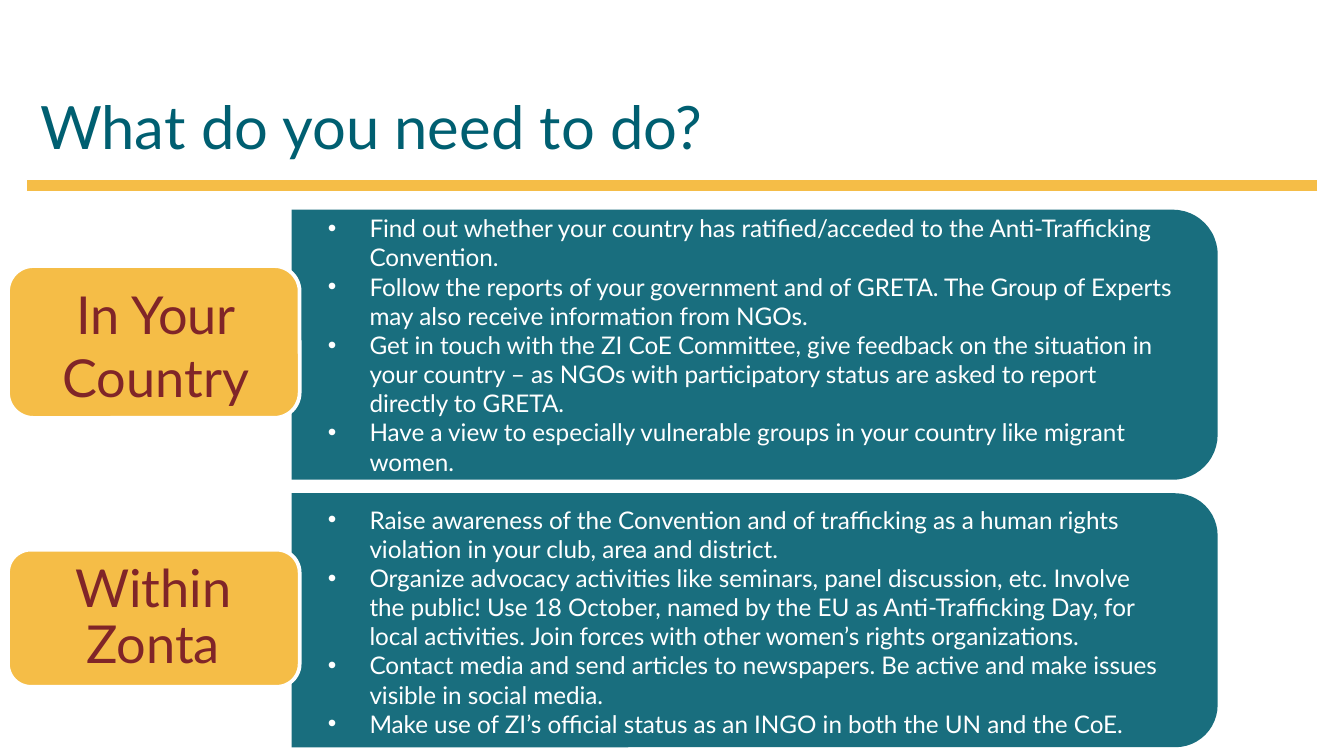
import pptx
import pptx.dml.color
import pptx.enum.shapes
import pptx.enum.text
import pptx.util
from lxml import etree
from pptx.oxml.ns import qn

Inches = pptx.util.Inches
Pt = pptx.util.Pt
RGBColor = pptx.dml.color.RGBColor
SHAPE = pptx.enum.shapes.MSO_SHAPE
ANCHOR = pptx.enum.text.MSO_ANCHOR
ALIGN = pptx.enum.text.PP_ALIGN

TEAL = RGBColor(0x00, 0x5F, 0x71)
GOLD = RGBColor(0xF5, 0xBD, 0x47)
MAROON = RGBColor(0x80, 0x25, 0x28)
WHITE = RGBColor(0xFF, 0xFF, 0xFF)
FONT = "Lato"

PAGE_WIDTH = 10
PAGE_HEIGHT = PAGE_WIDTH * 9 / 16
PANEL_LEFT, PANEL_WIDTH = 2.17, 6.89
LABEL_LEFT, LABEL_WIDTH = 0.06, 2.17

COUNTRY_STEPS = [
    "Find out whether your country has ratified/acceded to the Anti-Trafficking Convention.",
    "Follow the reports of your government and of GRETA. The Group of Experts may also "
    "receive information from NGOs.",
    "Get in touch with the ZI CoE Committee, give feedback on the situation in your country "
    "– as NGOs with participatory status are asked to report directly to GRETA.",
    "Have a view to especially vulnerable groups in your country like migrant women.",
]
ZONTA_STEPS = [
    "Raise awareness of the Convention and of trafficking as a human rights violation in "
    "your club, area and district.",
    "Organize advocacy activities like seminars, panel discussion, etc. Involve the public! "
    "Use 18 October, named by the EU as Anti-Trafficking Day, for local activities. Join "
    "forces with other women’s rights organizations.",
    "Contact media and send articles to newspapers. Be active and make issues visible in "
    "social media.",
    "Make use of ZI’s official status as an INGO in both the UN and the CoE.",
]


def style_font(para, size, color):
    for span in para.runs:
        span.font.name = FONT
        span.font.size = Pt(size)
        span.font.color.rgb = color


def add_text_box(page, left, top, width, height, anchor, inset=(0.1, 0.05)):
    box = page.shapes.add_textbox(Inches(left), Inches(top), Inches(width), Inches(height))
    frame = box.text_frame
    frame.word_wrap = True
    frame.vertical_anchor = anchor
    frame.margin_left = frame.margin_right = Inches(inset[0])
    frame.margin_top = frame.margin_bottom = Inches(inset[1])
    return frame


def add_title(page, text):
    frame = add_text_box(page, 0.2, 0.31, 9.6, 0.94, ANCHOR.BOTTOM)
    frame.text = text
    style_font(frame.paragraphs[0], 32, TEAL)


def add_rule(page):
    rule = page.shapes.add_connector(
        pptx.enum.shapes.MSO_CONNECTOR.STRAIGHT,
        Inches(9.8), Inches(1.38), Inches(0.2), Inches(1.38))
    rule.line.color.rgb = GOLD
    rule.line.width = Pt(6)
    etree.SubElement(rule._element.spPr, qn("a:effectLst"))


def add_panel(page, top, height):
    """Add a teal panel rounded on its right side, by turning a top-rounded shape."""
    left = PANEL_LEFT + (PANEL_WIDTH - height) / 2
    upright_top = top + (height - PANEL_WIDTH) / 2
    panel = page.shapes.add_shape(
        SHAPE.ROUND_2_SAME_RECTANGLE,
        Inches(left), Inches(upright_top), Inches(height), Inches(PANEL_WIDTH))
    panel.rotation = 90
    panel.shadow.inherit = False
    panel.fill.solid()
    panel.fill.fore_color.rgb = TEAL
    panel.line.fill.background()
    color = panel._element.spPr.find(qn("a:solidFill")).find(qn("a:srgbClr"))
    etree.SubElement(color, qn("a:alpha"), val="90000")


def add_bullet(para):
    props = para._p.get_or_add_pPr()
    props.set("marL", str(Inches(0.31)))
    props.set("indent", str(Inches(-0.31)))
    etree.SubElement(props, qn("a:buFont"), typeface="Arial")
    etree.SubElement(props, qn("a:buChar"), char="•")


def add_steps(page, steps, top, width, height):
    frame = add_text_box(page, PANEL_LEFT, top, width, height, ANCHOR.MIDDLE, (0.27, 0.14))
    frame.text = "\n".join(steps)
    for para in frame.paragraphs:
        add_bullet(para)
        style_font(para, 13, WHITE)


def add_label(page, text, top, height, text_area, line_spacing):
    label = page.shapes.add_shape(
        SHAPE.ROUNDED_RECTANGLE,
        Inches(LABEL_LEFT), Inches(top), Inches(LABEL_WIDTH), Inches(height))
    label.shadow.inherit = False
    label.fill.solid()
    label.fill.fore_color.rgb = GOLD
    label.line.color.rgb = WHITE
    label.line.width = Pt(2)
    frame = add_text_box(page, *text_area, ANCHOR.MIDDLE)
    frame.text = text
    para = frame.paragraphs[0]
    para.alignment = ALIGN.CENTER
    para.line_spacing = line_spacing
    style_font(para, 28, MAROON)


def main():
    deck = pptx.Presentation()
    deck.slide_width = Inches(PAGE_WIDTH)
    deck.slide_height = Inches(PAGE_HEIGHT)
    page = deck.slides.add_slide(deck.slide_layouts[6])

    add_rule(page)
    add_title(page, "What do you need to do?")

    add_panel(page, 1.56, 2.01)
    add_steps(page, COUNTRY_STEPS, 1.66, 6.84, 1.81)
    add_panel(page, 3.67, 1.89)
    add_steps(page, ZONTA_STEPS, 3.76, 6.8, 1.73)

    add_label(page, "In Your Country", 1.98, 1.13, (0.13, 1.99, 2.06, 1.15), 1.0)
    add_label(page, "Within Zonta", 4.09, 1.02, (0.11, 4.14, 2.06, 0.92), 0.9)

    deck.save("out.pptx")


if __name__ == "__main__":
    main()
